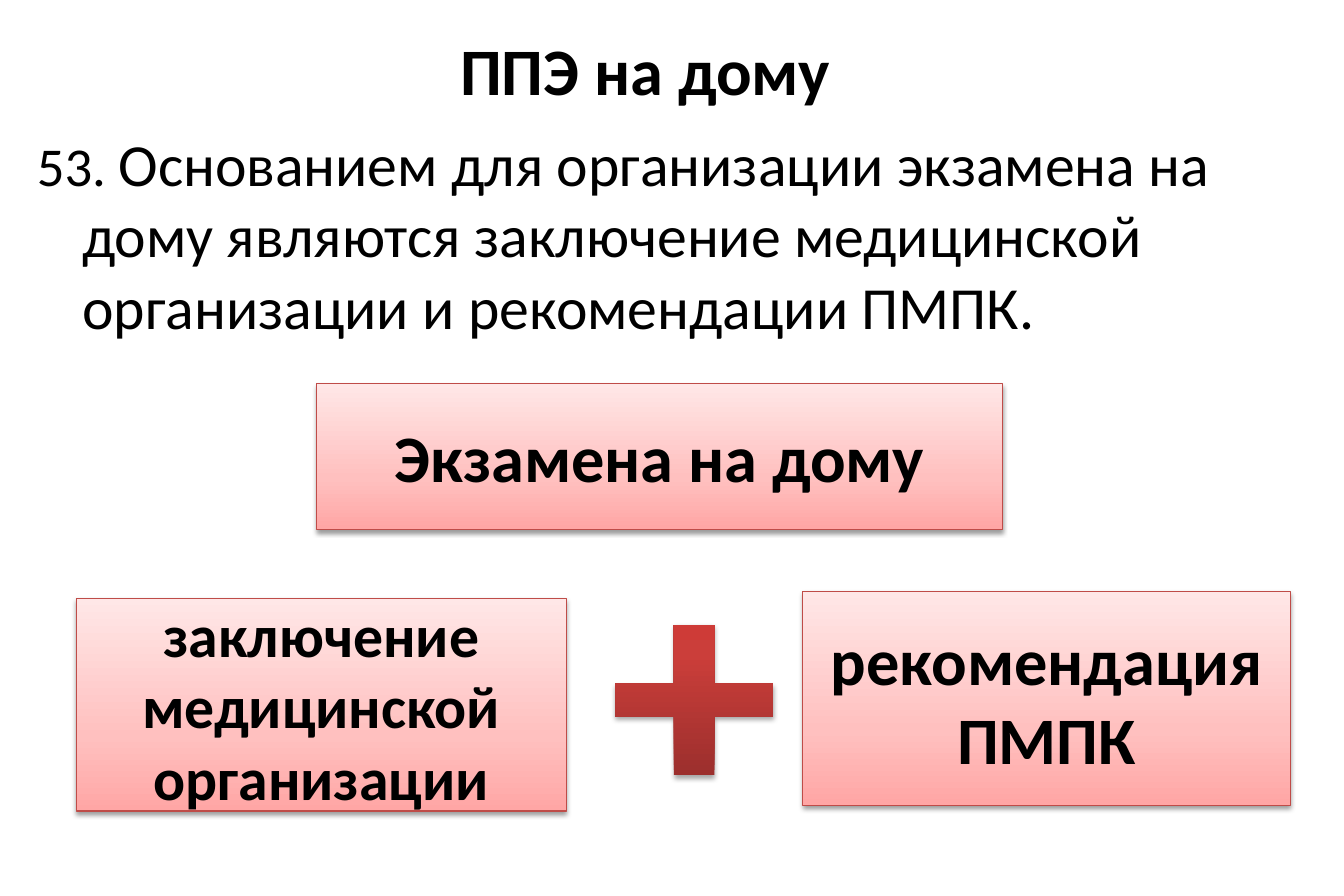
from lxml import etree
from pptx import Presentation
from pptx.dml.color import RGBColor
from pptx.enum.shapes import MSO_SHAPE
from pptx.enum.text import MSO_ANCHOR, MSO_AUTO_SIZE, PP_ALIGN
from pptx.oxml.ns import qn
from pptx.util import Inches, Pt

RECT, PLUS = MSO_SHAPE.RECTANGLE, MSO_SHAPE.CROSS
MIDDLE, CENTER = MSO_ANCHOR.MIDDLE, PP_ALIGN.CENTER
NO_FIT = MSO_AUTO_SIZE.NONE

FONT = "Calibri"
COLORS = {"text": "000000", "edge": "BF4C48", "shade": "000000"}
PINK = [(0, "FFA6A5"), (35, "FFC0BF"), (100, "FFE7E7")]
RED = [(0, "9C2F2D"), (80, "CB3E3A"), (100, "CE3B37")]

TITLE = ("ППЭ на дому", 40, (0, 0.23, 10.8, 0.7))
BODY_AT = (0.21, 1.01, 10.45, 2.2)
BODY = [
    ("53. ", 33),
    ("Основанием для организации экзамена на дому являются заключение "
     "медицинской организации и рекомендации ПМПК.", 36),
]
BOXES = [
    ("Экзамена на дому", 40, (2.65, 3.21, 5.74, 1.22)),
    ("заключение медицинской организации", 36, (0.64, 5.01, 4.1, 1.78)),
    ("рекомендация ПМПК", 40, (6.72, 4.95, 4.08, 1.79)),
]
PLUS_AT = (5.15, 5.23, 1.32, 1.26)


def color(name):
    return RGBColor.from_string(COLORS[name])


def style(font, size, bold=False):
    font.name, font.size, font.bold = FONT, Pt(size), bold
    font.color.rgb = color("text")


def label(shape, text, size):
    """Write one bold, centred paragraph into the shape."""
    frame = shape.text_frame
    frame.text = text
    frame.word_wrap = True
    frame.auto_size = NO_FIT
    frame.vertical_anchor = MIDDLE
    line = frame.paragraphs[0]
    line.alignment = CENTER
    style(line.font, size, True)


def add_color(parent, value, alpha=None):
    node = etree.SubElement(parent, qn("a:srgbClr"), val=value)
    if alpha:
        etree.SubElement(node, qn("a:alpha"), val=str(alpha * 1000))


def block(slide, kind, at, stops, alpha, drop):
    """Add a shape with an upward gradient and a soft shadow below."""
    shape = slide.shapes.add_shape(kind, *map(Inches, at))
    shape.fill.gradient()
    shape.fill.gradient_angle = 90
    props = shape.element.spPr
    ramp = props.find(qn("a:gradFill")).find(qn("a:gsLst"))
    for stop in list(ramp):
        ramp.remove(stop)
    for spot, value in stops:
        stop = etree.SubElement(ramp, qn("a:gs"), pos=str(spot * 1000))
        add_color(stop, value)
    shape.line.fill.background()
    shape.shadow.inherit = False
    shade = etree.SubElement(
        props.find(qn("a:effectLst")), qn("a:outerShdw"),
        blurRad=str(Pt(3.1)), dist=str(Pt(drop)), dir="5400000",
        rotWithShape="0")
    add_color(shade, COLORS["shade"], alpha)
    return shape


def main():
    deck = Presentation()
    deck.slide_width, deck.slide_height = Inches(11.25), Inches(7.5)
    slide = deck.slides.add_slide(deck.slide_layouts[5])

    text, size, at = TITLE
    title = slide.shapes.title
    title.left, title.top, title.width, title.height = map(Inches, at)
    label(title, text, size)

    body = slide.shapes.add_textbox(*map(Inches, BODY_AT)).text_frame
    body.word_wrap = True
    para = body.paragraphs[0]
    para.space_before = Pt(7)
    indent = Inches(0.38)
    props = para._p.get_or_add_pPr()
    props.set("marL", str(indent))
    props.set("indent", str(-indent))
    for text, size in BODY:
        run = para.add_run()
        run.text = text
        style(run.font, size)

    for text, size, at in BOXES:
        box = block(slide, RECT, at, PINK, 38, 1.6)
        box.line.color.rgb = color("edge")
        box.line.width = Pt(0.75)
        label(box, text, size)

    plus = block(slide, PLUS, PLUS_AT, RED, 35, 1.8)
    plus.adjustments[0] = 0.39

    deck.save("out.pptx")


if __name__ == "__main__":
    main()
